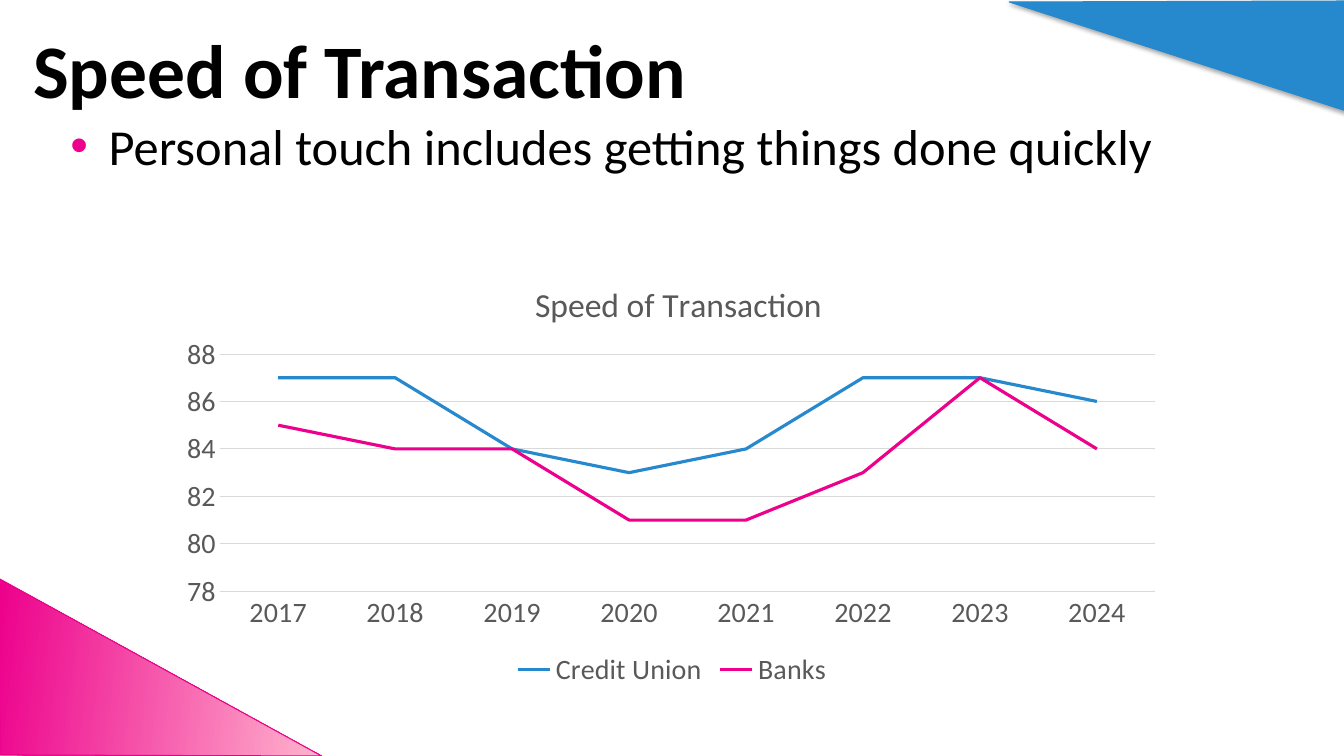
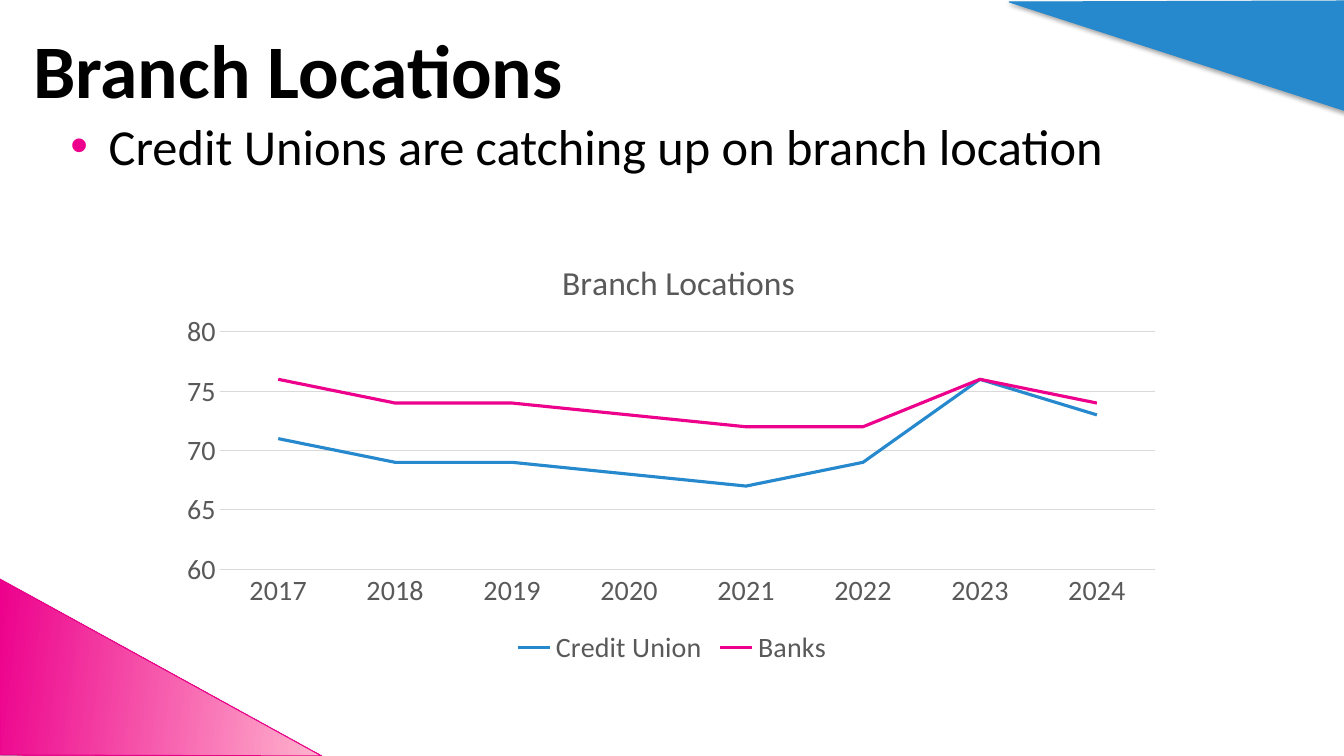
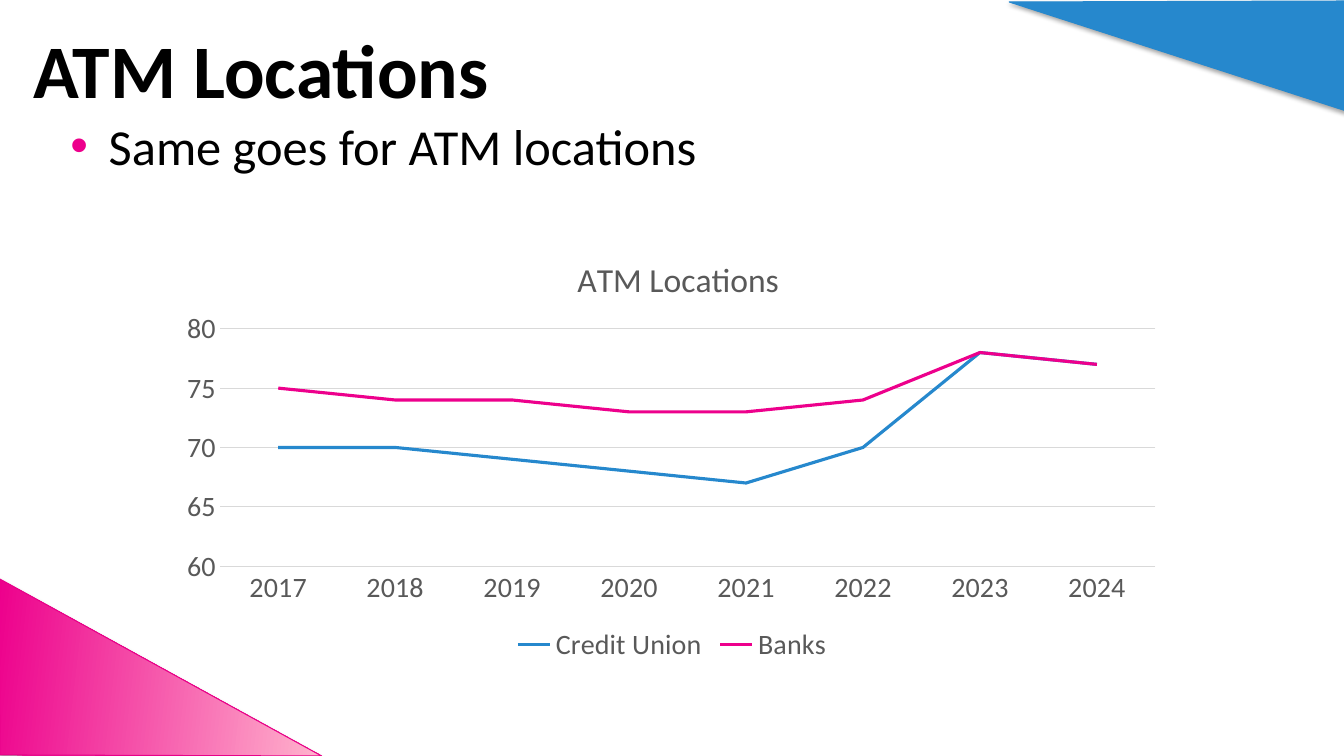
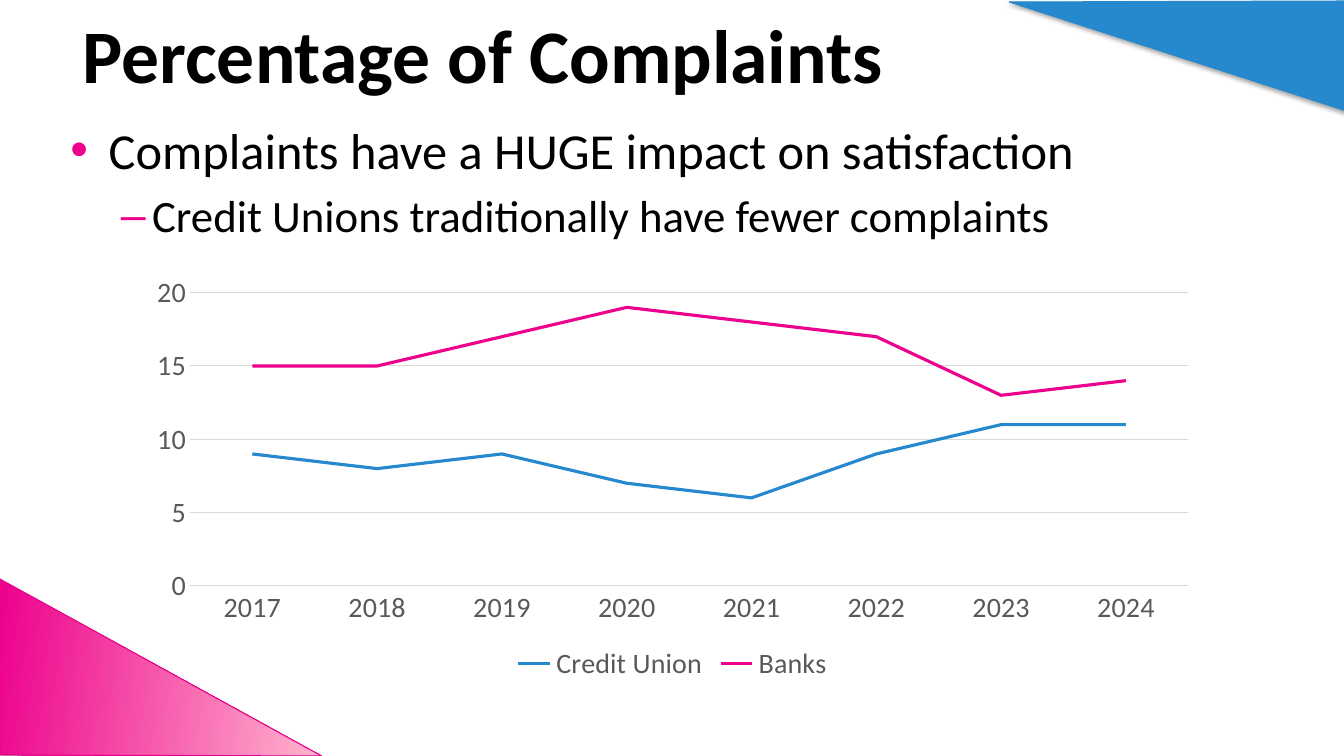
from lxml import etree
from pptx import Presentation
from pptx.chart.data import CategoryChartData
from pptx.dml.color import RGBColor
from pptx.enum.chart import XL_CHART_TYPE as ChartType
from pptx.enum.chart import XL_LEGEND_POSITION as LegendPosition
from pptx.enum.chart import XL_TICK_MARK as TickMark
from pptx.enum.text import MSO_ANCHOR as Anchor
from pptx.oxml import parse_xml
from pptx.oxml.ns import nsdecls, qn
from pptx.util import Inches, Pt

COLORS = {
    "text": "000000",
    "blue": "2688CD",
    "pink": "ED008C",
    "light_pink": "FFB4CD",
    "pink_edge": "E80089",
    "chart_text": "595959",
    "grid": "D9D9D9",
}
FONT = "Calibri"
TITLE_STYLE = {"name": FONT, "size": Pt(54), "bold": True}
BODY_STYLES = [{"name": FONT, "size": Pt(36)}, {"name": FONT, "size": Pt(32)}]
AXIS_STYLE = {"name": FONT, "size": Pt(20), "bold": False}
CHART_TITLE_STYLE = {"name": FONT, "size": Pt(24), "bold": False}

# Per level: bullet, left margin and hanging indent in inches
BULLETS = [("•", 0.38, -0.38), ("–", 0.81, -0.31)]

YEARS = [str(year) for year in range(2017, 2025)]
SERIES_COLORS = {"Credit Union": "blue", "Banks": "pink"}
# Plot areas as fractions of the chart: x, y, width, height
PLOT_BELOW_TITLE = (0.051, 0.23, 0.929, 0.54)
PLOT_ALONE = (0.051, 0.052, 0.929, 0.706)

SLIDES = [
    {
        "title": "Speed of Transaction",
        "title_box": (0.23, 0.21, 9.99, 0.93),
        "points": ["Personal touch includes getting things done quickly"],
        "points_box": (0.6, 1.09, 12.22, 1.42),
        "chart_box": (1.67, 2.51, 9.99, 4.36),
        "heading_x": 0.358,
        "scale": (78, 88, 2),
        "values": [(87, 87, 84, 83, 84, 87, 87, 86),
                   (85, 84, 84, 81, 81, 83, 87, 84)],
    },
    {
        "title": "Branch Locations",
        "title_box": (0.23, 0.21, 10.5, 0.93),
        "points": ["Credit Unions are catching up on branch location"],
        "points_box": (0.6, 1.09, 11.39, 0.75),
        "chart_box": (1.67, 2.29, 9.99, 4.36),
        "heading_x": 0.385,
        "scale": (60, 80, 5),
        "values": [(71, 69, 69, 68, 67, 69, 76, 73),
                   (76, 74, 74, 73, 72, 72, 76, 74)],
    },
    {
        "title": "ATM Locations",
        "title_box": (0.23, 0.21, 10.5, 0.93),
        "points": ["Same goes for ATM locations"],
        "points_box": (0.6, 1.09, 11.39, 0.77),
        "chart_box": (1.67, 2.26, 9.99, 4.36),
        "heading_x": 0.4,
        "scale": (60, 80, 5),
        "values": [(70, 70, 69, 68, 67, 70, 78, 77),
                   (75, 74, 74, 73, 73, 74, 78, 77)],
    },
    {
        "title": "Percentage of Complaints",
        "title_box": (0.72, 0.06, 8.35, 0.93),
        "points": ["Complaints have a HUGE impact on satisfaction",
                   "Credit Unions traditionally have fewer complaints"],
        "points_box": (0.6, 1.13, 10.36, 1.42),
        "chart_box": (1.34, 2.69, 10.66, 4.12),
        "heading_x": None,
        "scale": (0, 20, 5),
        "values": [(9, 8, 9, 7, 6, 9, 11, 11),
                   (15, 15, 17, 19, 18, 17, 13, 14)],
    },
]


def rgb(name):
    return RGBColor.from_string(COLORS[name])


def inches(values):
    return [Inches(value) for value in values]


def style_font(font, style, color):
    for attribute, value in style.items():
        setattr(font, attribute, value)
    font.color.rgb = rgb(color)


def style_line(line, color, width):
    line.color.rgb = rgb(color)
    line.width = Pt(width)


def add_shadow(shape):
    shape._element.spPr.append(parse_xml(
        f'<a:effectLst {nsdecls("a")}>'
        '<a:outerShdw blurRad="40000" dist="23000" dir="5400000" rotWithShape="0">'
        '<a:srgbClr val="000000"><a:alpha val="35000"/></a:srgbClr>'
        '</a:outerShdw></a:effectLst>'))


def add_triangle(slide, corners, edge):
    start, *others = [inches(corner) for corner in corners]
    builder = slide.shapes.build_freeform(*start)
    builder.add_line_segments(others, close=True)
    triangle = builder.convert_to_shape()
    style_line(triangle.line, edge, 0.75)
    add_shadow(triangle)
    return triangle


def add_corners(slide):
    top = add_triangle(slide, [(13.33, 0.01), (13.35, 1.1), (10.01, 0.02)], "blue")
    top.fill.solid()
    top.fill.fore_color.rgb = rgb("blue")

    bottom = add_triangle(slide, [(-0.01, 5.74), (3.19, 7.5), (0, 7.49)], "pink_edge")
    bottom.fill.gradient()
    bottom.fill.gradient_angle = 353.4
    for stop, color in zip(bottom.fill.gradient_stops, ("pink", "light_pink")):
        stop.color.rgb = rgb(color)


def add_text_frame(slide, box):
    frame = slide.shapes.add_textbox(*inches(box)).text_frame
    frame.word_wrap = True
    return frame


def add_title(slide, text, box):
    frame = add_text_frame(slide, box)
    frame.vertical_anchor = Anchor.MIDDLE
    run = frame.paragraphs[0].add_run()
    run.text = text
    style_font(run.font, TITLE_STYLE, "text")


def set_bullet(paragraph, level):
    symbol, margin, indent = BULLETS[level]
    properties = paragraph._p.get_or_add_pPr()
    properties.set("marL", str(Inches(margin)))
    properties.set("indent", str(Inches(indent)))
    color = etree.SubElement(properties, qn("a:buClr"))
    etree.SubElement(color, qn("a:srgbClr"), val=COLORS["pink"])
    etree.SubElement(properties, qn("a:buFont"), typeface="Arial")
    etree.SubElement(properties, qn("a:buChar"), char=symbol)


def add_points(slide, points, box):
    """Add bulleted text, each point one level below the point before."""
    frame = add_text_frame(slide, box)
    for level, text in enumerate(points):
        paragraph = frame.add_paragraph() if level else frame.paragraphs[0]
        paragraph.level = level
        paragraph.space_after = Pt(6)
        set_bullet(paragraph, level)
        run = paragraph.add_run()
        run.text = text
        style_font(run.font, BODY_STYLES[level], "text")


def manual_layout(**settings):
    entries = "".join(f'<c:{tag} val="{value}"/>' for tag, value in settings.items())
    return parse_xml(f'<c:layout {nsdecls("c")}><c:manualLayout>{entries}'
                     '</c:manualLayout></c:layout>')


def place_plot(chart, area):
    plot_area = chart._chartSpace.chart.plotArea
    for old in plot_area.findall(qn("c:layout")):
        plot_area.remove(old)
    x, y, w, h = area
    plot_area.insert(0, manual_layout(layoutTarget="inner", xMode="edge",
                                      yMode="edge", x=x, y=y, w=w, h=h))


def add_heading(chart, text, x):
    frame = chart.chart_title.text_frame
    frame.text = text
    style_font(frame.paragraphs[0].runs[0].font, CHART_TITLE_STYLE, "chart_text")
    chart.chart_title.include_in_layout = False
    title = chart.chart_title._element
    for old in title.findall(qn("c:layout")):
        title.remove(old)
    title.find(qn("c:tx")).addnext(
        manual_layout(xMode="edge", yMode="edge", x=x, y=0.053))


def style_axes(chart, scale):
    years, scores = chart.category_axis, chart.value_axis
    for axis in (years, scores):
        axis.major_tick_mark = axis.minor_tick_mark = TickMark.NONE
        style_font(axis.tick_labels.font, AXIS_STYLE, "chart_text")
    style_line(years.format.line, "grid", 0.75)
    scores.format.line.fill.background()
    style_line(scores.major_gridlines.format.line, "grid", 0.75)
    scores.minimum_scale, scores.maximum_scale, scores.major_unit = scale
    scores.tick_labels.number_format = "0"
    scores.tick_labels.number_format_is_linked = False


def add_trend_chart(slide, content):
    data = CategoryChartData()
    data.categories = YEARS
    for name, values in zip(SERIES_COLORS, content["values"]):
        data.add_series(name, values)
    chart = slide.shapes.add_chart(
        ChartType.LINE, *inches(content["chart_box"]), data).chart
    style_font(chart.font, AXIS_STYLE, "text")

    chart.has_title = content["heading_x"] is not None
    if chart.has_title:
        add_heading(chart, content["title"], content["heading_x"])
    place_plot(chart, PLOT_BELOW_TITLE if chart.has_title else PLOT_ALONE)
    style_axes(chart, content["scale"])

    chart.has_legend = True
    chart.legend.position = LegendPosition.BOTTOM
    chart.legend.include_in_layout = False
    style_font(chart.legend.font, AXIS_STYLE, "chart_text")

    chart.plots[0].vary_by_categories = False
    for series in chart.plots[0].series:
        series.smooth = False
        style_line(series.format.line, SERIES_COLORS[series.name], 2.25)


def main():
    deck = Presentation()
    deck.slide_width, deck.slide_height = inches((13.33, 7.5))
    for content in SLIDES:
        slide = deck.slides.add_slide(deck.slide_layouts[6])
        add_corners(slide)
        add_title(slide, content["title"], content["title_box"])
        add_points(slide, content["points"], content["points_box"])
        add_trend_chart(slide, content)
    deck.save("out.pptx")


if __name__ == "__main__":
    main()
